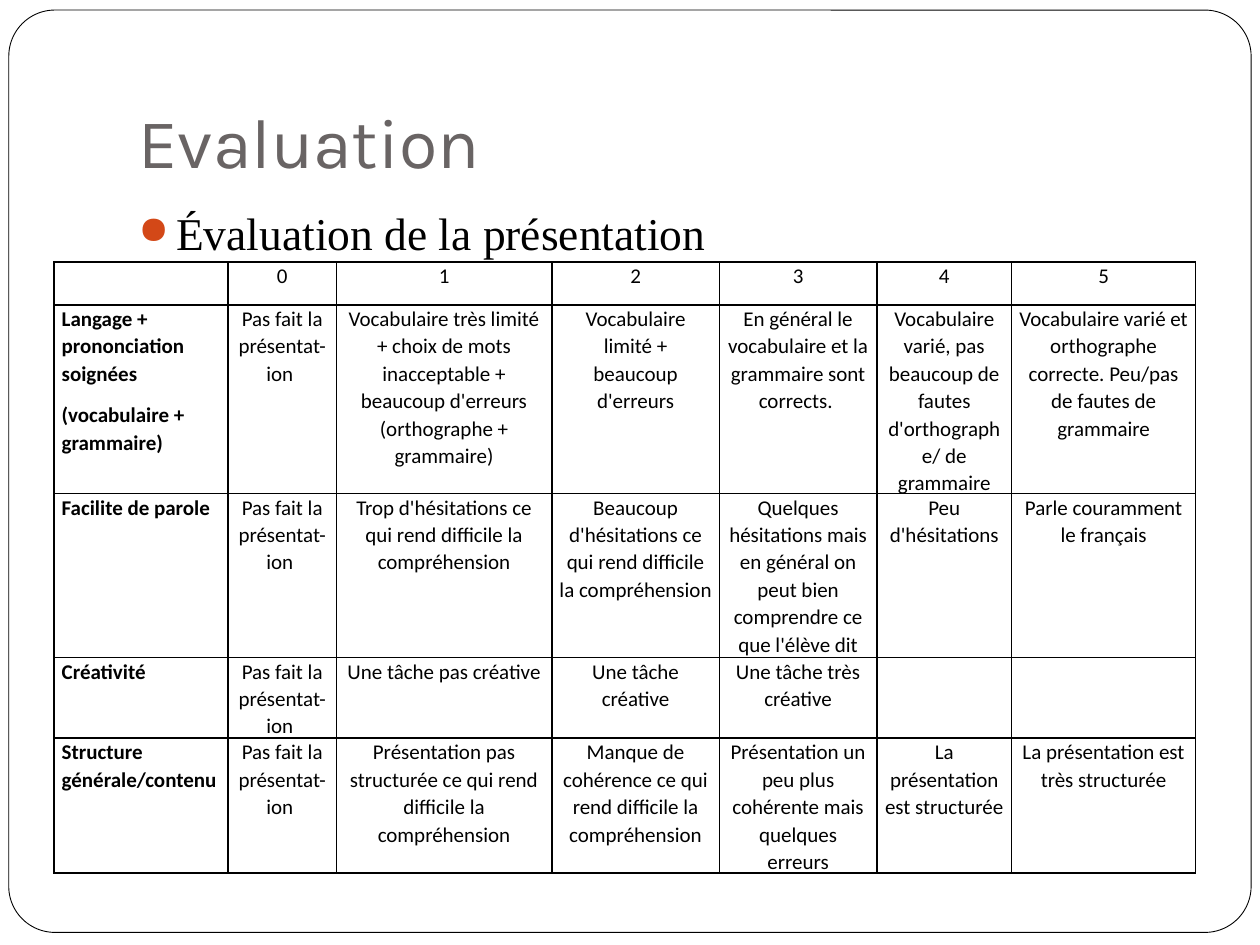
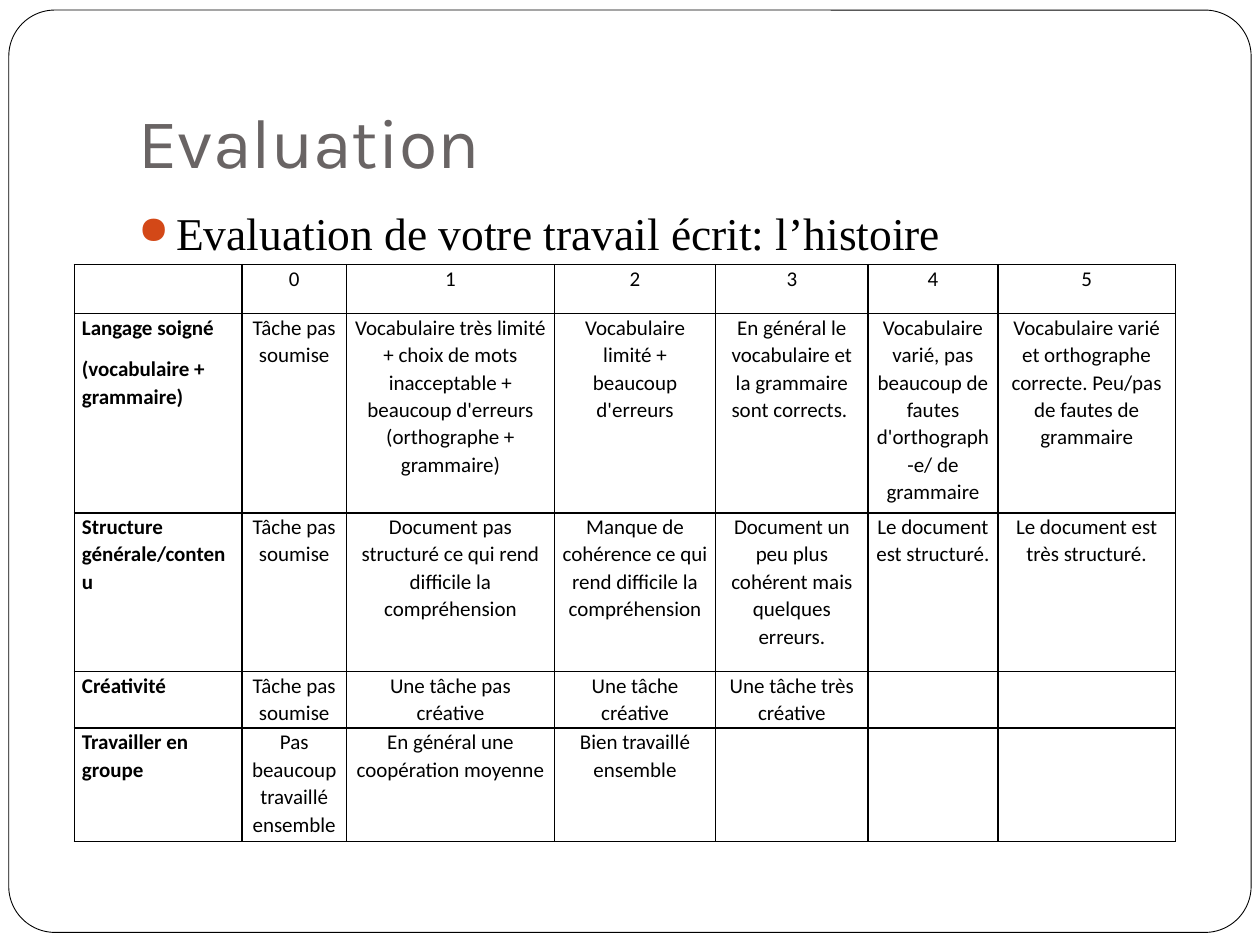
from pptx import Presentation
from pptx.dml.color import RGBColor
from pptx.enum.shapes import MSO_SHAPE
from pptx.enum.text import MSO_ANCHOR, PP_ALIGN
from pptx.oxml import parse_xml
from pptx.oxml.ns import nsdecls
from pptx.util import Inches, Pt

# Content: the first cell of each row is its label
TITLE = "Evaluation"
SCORES = ["", "0", "1", "2", "3", "4", "5"]
ABSENT = "Pas fait la présentat-ion "
UNDONE = "Tâche pas soumise"
LOW = [
    "Vocabulaire très limité + choix de mots inacceptable + "
    "beaucoup d'erreurs (orthographe + grammaire)",
    "Vocabulaire limité + beaucoup d'erreurs",
    "En général le vocabulaire et la grammaire sont corrects. ",
]
HIGH = "Vocabulaire varié et orthographe correcte. Peu/pas de fautes de grammaire"
CREATIVE = ["Une tâche pas créative", "Une tâche créative",
            "Une tâche très créative", "", ""]
VAGUE = "Manque de cohérence ce qui rend difficile la compréhension"

SLIDES = [
    {
        "topic": "Évaluation de la présentation",
        "at": (0.43, 2.08),
        "cols": [1.38, 0.86, 1.71, 1.33, 1.25, 1.07, 1.46],
        "rows": [0.34, 1.37, 1.3, 0.59, 0.98],
        "grid": [
            SCORES,
            ["Langage + prononciation soignées\n(vocabulaire + grammaire)", ABSENT, *LOW,
             "Vocabulaire varié, pas beaucoup de fautes d'orthographe/ de grammaire", HIGH],
            ["Facilite de parole", ABSENT,
             "Trop d'hésitations ce qui rend difficile la compréhension",
             "Beaucoup d'hésitations ce qui rend difficile la compréhension",
             "Quelques hésitations mais en général on peut bien comprendre "
             "ce que l'élève dit",
             "Peu d'hésitations", "Parle couramment le français"],
            ["Créativité", ABSENT, *CREATIVE],
            ["Structure générale/contenu", ABSENT,
             "Présentation pas structurée ce qui rend difficile la compréhension", VAGUE,
             "Présentation un peu plus cohérente mais quelques erreurs",
             "La présentation est structurée", "La présentation est très structurée"],
        ],
    },
    {
        "topic": "Evaluation de votre travail écrit: l’histoire",
        "at": (0.59, 2.1),
        "cols": [1.33, 0.83, 1.65, 1.28, 1.21, 1.03, 1.41],
        "rows": [0.39, 1.58, 1.26, 0.45, 0.9],
        "grid": [
            SCORES,
            ["Langage soigné\n(vocabulaire + grammaire)", UNDONE, *LOW,
             "Vocabulaire varié, pas beaucoup de fautes d'orthograph-e/ de grammaire", HIGH],
            ["Structure générale/contenu", UNDONE,
             "Document pas structuré ce qui rend difficile la compréhension", VAGUE,
             "Document un peu plus cohérent mais quelques erreurs.",
             "Le document est structuré.", "Le document est très structuré."],
            ["Créativité", UNDONE, *CREATIVE],
            ["Travailler en groupe", "Pas beaucoup travaillé ensemble",
             "En général une coopération moyenne", "Bien travaillé ensemble", "", "", ""],
        ],
    },
]

# Shared look
INK, PAPER, GREY, ACCENT = "000000", "FFFFFF", "696464", "D34817"


def color(code):
    return RGBColor.from_string(code)


def style(para, name, size, code, bold=False):
    for run in para.runs:
        font = run.font
        font.name, font.size, font.bold = name, Pt(size), bold
        font.color.rgb = color(code)


def place(shape, *box):
    shape.left, shape.top, shape.width, shape.height = map(Inches, box)


def add_frame(slide):
    frame = slide.shapes.add_shape(
        MSO_SHAPE.ROUNDED_RECTANGLE, *map(Inches, (0.07, 0.08, 9.86, 7.32)))
    frame.adjustments[0] = 0.05
    frame.shadow.inherit = False
    frame.fill.solid()
    frame.fill.fore_color.rgb = color(PAPER)
    frame.line.color.rgb = color(INK)
    frame.line.width = Pt(0.5)
    # Send it behind the title
    slide.shapes._spTree.insert(2, frame._element)


def add_title(slide):
    title = slide.shapes.title
    place(title, 1, 0.3, 8.5, 1.25)
    frame = title.text_frame
    frame.text = TITLE
    frame.vertical_anchor = MSO_ANCHOR.BOTTOM
    frame.margin_left = frame.margin_right = frame.margin_bottom = Inches(0.1)
    frame.margin_top = Inches(0.05)
    para = frame.paragraphs[0]
    para.alignment = PP_ALIGN.LEFT
    style(para, "Karla", 40, GREY)


def add_topic(slide, text):
    box = slide.shapes.add_textbox(*map(Inches, (1, 1.58, 8.5, 0.5)))
    box.text_frame.word_wrap = True
    para = box.text_frame.paragraphs[0]
    para.text = text
    para.space_before = Pt(5.8)
    style(para, "Times New Roman", 26, INK)
    # Hanging round bullet
    props = para._p.get_or_add_pPr()
    props.set("marL", str(Inches(0.3)))
    props.set("indent", str(-Inches(0.3)))
    for mark in (f'<a:buClr {nsdecls("a")}><a:srgbClr val="{ACCENT}"/></a:buClr>',
                 f'<a:buSzPct {nsdecls("a")} val="85000"/>',
                 f'<a:buChar {nsdecls("a")} char="●"/>'):
        props.append(parse_xml(mark))


def fill_cell(cell, text, label):
    cell.margin_left = cell.margin_right = Inches(0.06)
    cell.margin_top = cell.margin_bottom = 0
    cell.text_frame.text = text
    for para in cell.text_frame.paragraphs:
        para.alignment = PP_ALIGN.LEFT if label else PP_ALIGN.CENTER
        para.line_spacing = 1.07
        para.space_after = Pt(8)
        style(para, "Calibri", 12, INK, label)
    # Borders come before the fill in the cell properties
    props = cell._tc.get_or_add_tcPr()
    for side in ("lnL", "lnR", "lnT", "lnB"):
        props.append(parse_xml(
            f'<a:{side} {nsdecls("a")} w="{Pt(1)}"><a:solidFill>'
            f'<a:srgbClr val="{INK}"/></a:solidFill></a:{side}>'))
    cell.fill.background()


def add_grid(slide, at, cols, rows, grid):
    box = map(Inches, (*at, sum(cols), sum(rows)))
    table = slide.shapes.add_table(len(rows), len(cols), *box).table
    table.first_row = table.horz_banding = False
    for col, width in zip(table.columns, cols):
        col.width = Inches(width)
    for row, height, texts in zip(table.rows, rows, grid):
        row.height = Inches(height)
        for num, (cell, text) in enumerate(zip(row.cells, texts)):
            fill_cell(cell, text, num == 0)


def main():
    deck = Presentation()
    deck.slide_width, deck.slide_height = Inches(10), Inches(7.5)
    for page in SLIDES:
        slide = deck.slides.add_slide(deck.slide_layouts[5])
        add_frame(slide)
        add_title(slide)
        add_topic(slide, page["topic"])
        add_grid(slide, page["at"], page["cols"], page["rows"], page["grid"])
    deck.save("out.pptx")


if __name__ == "__main__":
    main()
